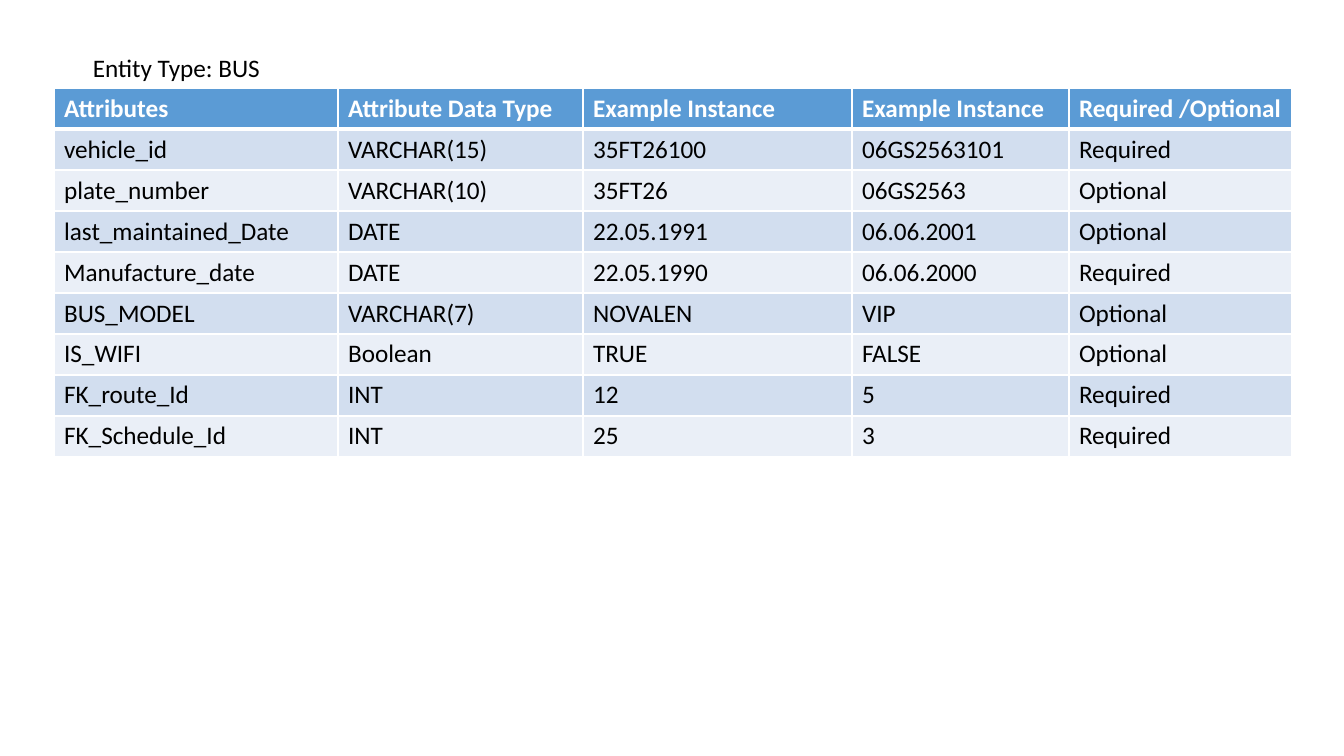
from lxml import etree
from pptx import Presentation
from pptx import util as u
from pptx.dml.color import RGBColor
from pptx.enum import text
from pptx.oxml.ns import qn

PX_PER_INCH = 100.8
FONT = "Calibri"
BLACK = RGBColor(0x00, 0x00, 0x00)
WHITE = RGBColor(0xFF, 0xFF, 0xFF)
HEADER_BLUE = RGBColor(0x5B, 0x9B, 0xD5)
BANDS = (RGBColor(0xD2, 0xDE, 0xEF), RGBColor(0xEA, 0xEF, 0xF7))

COLUMN_WIDTHS = (284, 245, 269, 217, 223)
ROW_HEIGHT = 41
ROWS = (
    ("Attributes", "Attribute Data Type", "Example Instance",
     "Example Instance", "Required /Optional"),
    ("vehicle_id", "VARCHAR(15)", "35FT26100", "06GS2563101", "Required"),
    ("plate_number", "VARCHAR(10)", "35FT26", "06GS2563", "Optional"),
    ("last_maintained_Date", "DATE", "22.05.1991", "06.06.2001", "Optional"),
    ("Manufacture_date", "DATE", "22.05.1990", "06.06.2000", "Required"),
    ("BUS_MODEL", "VARCHAR(7)", "NOVALEN", "VIP", "Optional"),
    ("IS_WIFI", "Boolean", "TRUE", "FALSE", "Optional"),
    ("FK_route_Id", "INT", "12", "5", "Required"),
    ("FK_Schedule_Id", "INT", "25", "3", "Required"),
)


def px(length):
    return u.Emu(round(length * 914400 / PX_PER_INCH))


def write(frame, words, color=BLACK, size=18, bold=False):
    span = frame.paragraphs[0].add_run()
    span.text = words
    span.font.name = FONT
    span.font.size = u.Pt(size)
    span.font.bold = bold
    span.font.color.rgb = color


def add_label(page, words, left, top, width, height):
    box = page.shapes.add_textbox(px(left), px(top), px(width), px(height))
    box.text_frame.word_wrap = False
    box.text_frame.auto_size = text.MSO_AUTO_SIZE.SHAPE_TO_FIT_TEXT
    write(box.text_frame, words)


def set_borders(cell, top=1, bottom=1):
    """Draw white cell borders; widths are in points."""
    properties = cell._tc.get_or_add_tcPr()
    widths = {"a:lnL": 1, "a:lnR": 1, "a:lnT": top, "a:lnB": bottom}
    for position, (tag, width) in enumerate(widths.items()):
        line = etree.Element(qn(tag), w=str(u.Pt(width)))
        fill = etree.SubElement(line, qn("a:solidFill"))
        etree.SubElement(fill, qn("a:srgbClr"), val=str(WHITE))
        properties.insert(position, line)


def fill_cell(cell, words, row):
    header = row == 0
    cell.fill.solid()
    cell.fill.fore_color.rgb = HEADER_BLUE if header else BANDS[(row - 1) % 2]
    write(cell.text_frame, words, color=WHITE if header else BLACK, bold=header)
    set_borders(cell, top=3 if row == 1 else 1, bottom=3 if header else 1)


def add_attribute_table(page, left, top):
    table = page.shapes.add_table(
        len(ROWS), len(COLUMN_WIDTHS), px(left), px(top),
        px(sum(COLUMN_WIDTHS)), px(ROW_HEIGHT * len(ROWS))).table
    for column, width in zip(table.columns, COLUMN_WIDTHS):
        column.width = px(width)
    for row, values in enumerate(ROWS):
        table.rows[row].height = px(ROW_HEIGHT)
        for column, words in enumerate(values):
            fill_cell(table.cell(row, column), words, row)


def main():
    deck = Presentation()
    deck.slide_width, deck.slide_height = px(1344), px(756)
    page = deck.slides.add_slide(deck.slide_layouts[6])
    add_label(page, "Entity Type: BUS", 83, 47, 190, 40)
    add_attribute_table(page, 54, 88)
    deck.save("out.pptx")


if __name__ == "__main__":
    main()
